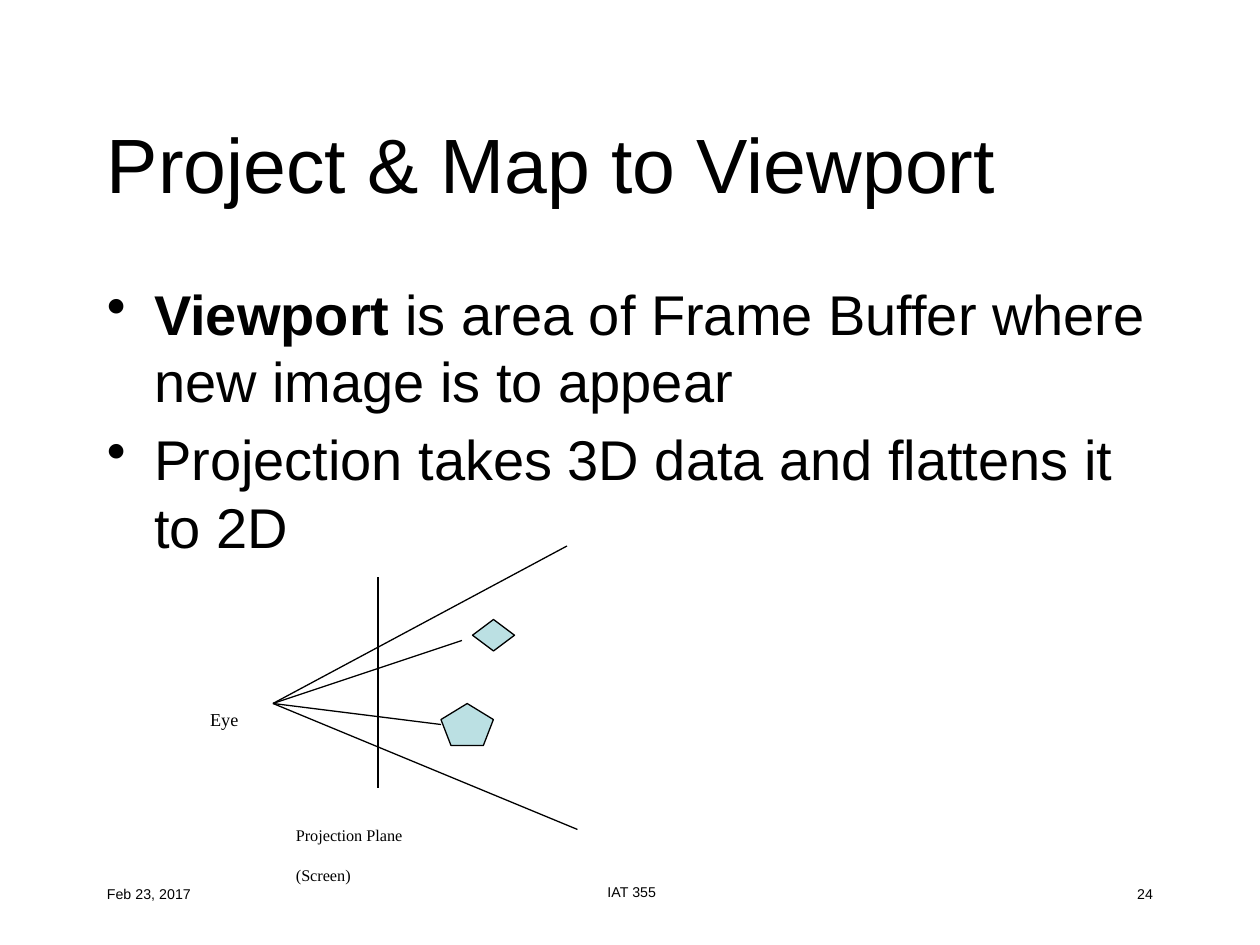
"""Build the slide on projecting 3D data and mapping it to a viewport."""
from lxml import etree
from pptx import Presentation, util as u
from pptx.dml.color import RGBColor
from pptx.enum import shapes, text
from pptx.oxml.ns import qn

Pt = u.Pt
HUES = {"ink": "000000", "fill": "BBE0E3", "page": "FFFFFF"}
SANS, SERIF = "Arial", "Times New Roman"
LEFT, MID, RIGHT = text.PP_ALIGN.LEFT, text.PP_ALIGN.CENTER, text.PP_ALIGN.RIGHT

TITLE = "Project & Map to Viewport"
BODY = [
    [("Viewport", True), (" is area of Frame Buffer where new image is to appear", False)],
    [("Projection takes 3D data and flattens it to 2D", False)],
]
FOOT = [
    ("Feb 23, 2017", (54, 492, 150, 36), LEFT),
    ("IAT 355", (247, 491, 228, 36), MID),
    ("24", (516, 492, 150, 36), RIGHT),
]
LABELS = [
    (["Eye"], (113, 387.5, 42.5, 28.8), 18),
    (["Projection Plane", "(Screen)"], (162, 456, 120, 46), 16),
]
EYE = (156, 402)
RAYS = [(324, 312), (330, 474), (264, 366), (252, 414)]
PLANE = ((216, 330), (216, 450))
SOLIDS = [
    (shapes.MSO_SHAPE.REGULAR_PENTAGON, (252, 402, 30, 24)),
    (shapes.MSO_SHAPE.DIAMOND, (270, 354, 24, 18)),
]


def hue(name):
    return RGBColor.from_string(HUES[name])


def add_text(slide, box, paras, size, face=SANS, align=LEFT, wrap=True, sub=False):
    frame = slide.shapes.add_textbox(*map(Pt, box)).text_frame
    frame.word_wrap = wrap
    for i, runs in enumerate(paras):
        para = frame.paragraphs[0] if i == 0 else frame.add_paragraph()
        para.alignment = align
        font = para.font
        font.size, font.name = Pt(size), face
        font.color.rgb = hue("ink")
        for words, bold in runs:
            run = para.add_run()
            run.text = words
            if bold:
                run.font.bold = True
            if sub:
                run._r.get_or_add_rPr().set("baseline", "-33000")
    return frame


def add_bullet(para):
    para.space_before = Pt(6.4)
    props = para._p.get_or_add_pPr()
    props.set("marL", str(Pt(27)))
    props.set("indent", str(-Pt(27)))
    mark = etree.Element(qn("a:buChar"), char="•")
    props.find(qn("a:defRPr")).addprevious(mark)


def add_line(slide, start, end):
    line = slide.shapes.add_connector(
        shapes.MSO_CONNECTOR.STRAIGHT, *map(Pt, start + end))
    line.line.color.rgb = hue("ink")
    line.line.width = Pt(0.75)
    etree.SubElement(line._element.spPr, qn("a:effectLst"))


def add_solid(slide, kind, box):
    solid = slide.shapes.add_shape(kind, *map(Pt, box))
    solid.shadow.inherit = False
    solid.fill.solid()
    solid.fill.fore_color.rgb = hue("fill")
    solid.line.color.rgb = hue("ink")
    solid.line.width = Pt(0.75)


def main():
    deck = Presentation()
    deck.slide_width, deck.slide_height = Pt(720), Pt(540)
    slide = deck.slides.add_slide(deck.slide_layouts[6])
    slide.background.fill.solid()
    slide.background.fill.fore_color.rgb = hue("page")

    for words, box, align in FOOT:
        add_text(slide, box, [[(words, False)]], 14, align=align, sub=True)
    title = add_text(slide, (54, 48, 612, 90), [[(TITLE, False)]], 44)
    title.vertical_anchor = text.MSO_ANCHOR.MIDDLE
    body = add_text(slide, (54, 156, 612, 324), BODY, 32)
    for para in body.paragraphs:
        add_bullet(para)

    for end in RAYS:
        add_line(slide, EYE, end)
    add_line(slide, *PLANE)
    for kind, box in SOLIDS:
        add_solid(slide, kind, box)
    for lines, box, size in LABELS:
        paras = [[(words, False)] for words in lines]
        frame = add_text(slide, box, paras, size, SERIF, wrap=False, sub=True)
        frame.auto_size = text.MSO_AUTO_SIZE.SHAPE_TO_FIT_TEXT
    deck.save("out.pptx")


if __name__ == "__main__":
    main()
